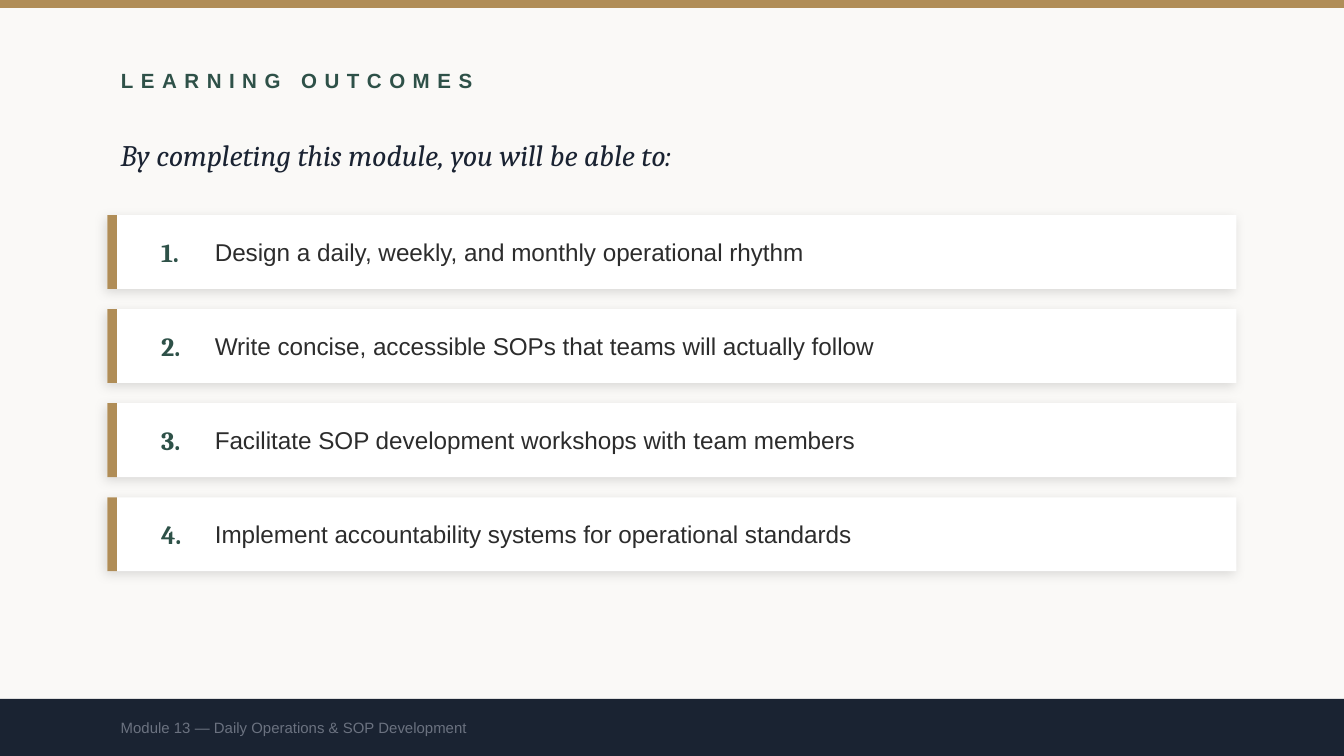
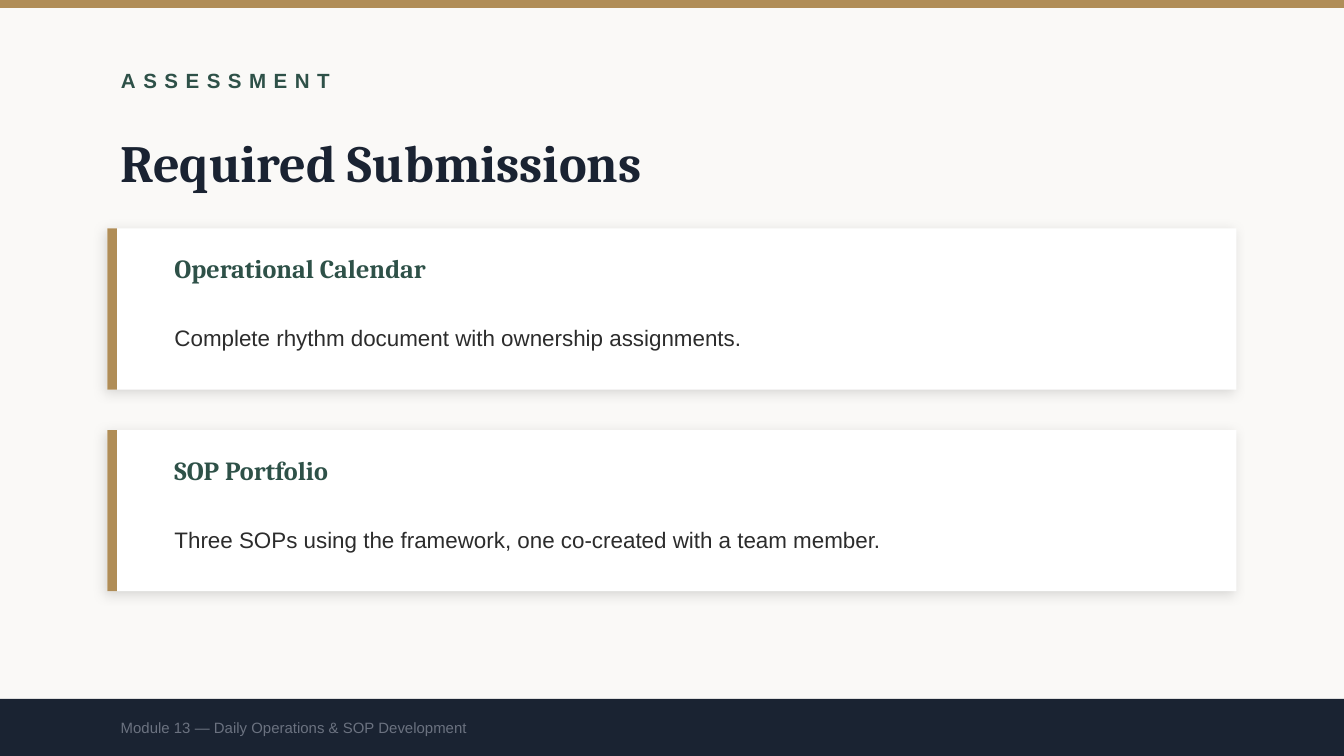
import pptx
import pptx.util
import pptx.dml.color
import pptx.enum.shapes
import pptx.enum.text
import pptx.oxml
import pptx.oxml.ns

Inches = pptx.util.Inches
COLORS = {
    "paper": "FAF9F7",
    "gold": "B08D57",
    "green": "2E5148",
    "navy": "1A2332",
    "card": "FFFFFF",
    "body": "2C2C2C",
    "muted": "6B7280",
}
SANS, SERIF = "Arial", "Cambria"
PAGE_WIDTH = 10
PAGE_HEIGHT = PAGE_WIDTH * 9 / 16
MARGIN = 0.8
FOOTER_TOP = 5.2
FOOTER_HEIGHT = PAGE_HEIGHT - FOOTER_TOP
FOOTER = "Module 13 — Daily Operations & SOP Development"
SHADOW = (
    f'<a:outerShdw {pptx.oxml.ns.nsdecls("a")} blurRad="76200" dist="25400" '
    'dir="8100000" algn="bl" rotWithShape="0">'
    '<a:srgbClr val="000000"><a:alpha val="12000"/></a:srgbClr></a:outerShdw>'
)


def add_bar(slide, left, top, width, height, color):
    bar = slide.shapes.add_shape(
        pptx.enum.shapes.MSO_SHAPE.RECTANGLE,
        Inches(left), Inches(top), Inches(width), Inches(height))
    bar.fill.solid()
    bar.fill.fore_color.rgb = pptx.dml.color.RGBColor.from_string(COLORS[color])
    bar.line.fill.background()
    bar.shadow.inherit = False
    return bar


def add_text(slide, words, left, top, width, height, size, font, color,
             bold=False, italic=False, box=None):
    box = box or slide.shapes.add_textbox(0, 0, 0, 0)
    box.left, box.top = Inches(left), Inches(top)
    box.width, box.height = Inches(width), Inches(height)
    frame = box.text_frame
    frame.text = words
    frame.word_wrap = True
    frame.auto_size = pptx.enum.text.MSO_AUTO_SIZE.NONE
    frame.vertical_anchor = pptx.enum.text.MSO_ANCHOR.MIDDLE
    paragraph = frame.paragraphs[0]
    paragraph.alignment = pptx.enum.text.PP_ALIGN.LEFT
    paragraph.font.size = pptx.util.Pt(size)
    paragraph.font.name = font
    paragraph.font.bold = bold
    paragraph.font.italic = italic
    paragraph.font.color.rgb = pptx.dml.color.RGBColor.from_string(COLORS[color])
    return paragraph


prs = pptx.Presentation()
prs.slide_width, prs.slide_height = Inches(PAGE_WIDTH), Inches(PAGE_HEIGHT)
paper = prs.slide_master.background.fill
paper.solid()
paper.fore_color.rgb = pptx.dml.color.RGBColor.from_string(COLORS["paper"])

pages = []
for section, card_tops, card_height in [
    ("LEARNING OUTCOMES", [1.6 + 0.7 * i for i in range(4)], 0.55),
    ("ASSESSMENT", [1.7 + 1.5 * i for i in range(2)], 1.2),
]:
    slide = prs.slides.add_slide(prs.slide_layouts[5])
    add_bar(slide, 0, 0, PAGE_WIDTH, 0.06, "gold")
    heading = add_text(slide, section, MARGIN, 0.4, 8, 0.4, 11, SANS, "green",
                       bold=True, box=slide.shapes.title)
    heading.runs[0]._r.get_or_add_rPr().set("spc", "400")
    for top in card_tops:
        card = add_bar(slide, MARGIN, top, 8.4, card_height, "card")
        effects = card._element.spPr.find(pptx.oxml.ns.qn("a:effectLst"))
        effects.append(pptx.oxml.parse_xml(SHADOW))
        add_bar(slide, MARGIN, top, 0.07, card_height, "gold")
    add_bar(slide, 0, FOOTER_TOP, PAGE_WIDTH, FOOTER_HEIGHT, "navy")
    add_text(slide, FOOTER, MARGIN, FOOTER_TOP, 8, FOOTER_HEIGHT, 8, SANS, "muted")
    pages.append((slide, card_tops))

outcomes, outcome_tops = pages[0]
add_text(outcomes, "By completing this module, you will be able to:",
         MARGIN, 0.9, 8, 0.5, 16, SERIF, "navy", italic=True)
outcome_texts = [
    "Design a daily, weekly, and monthly operational rhythm",
    "Write concise, accessible SOPs that teams will actually follow",
    "Facilitate SOP development workshops with team members",
    "Implement accountability systems for operational standards",
]
for number, (top, outcome) in enumerate(zip(outcome_tops, outcome_texts), 1):
    add_text(outcomes, f"{number}.", 1.1, top, 0.4, 0.55, 14, SERIF, "green", bold=True)
    add_text(outcomes, outcome, 1.5, top, 7.4, 0.55, 13, SANS, "body")

assessment, submission_tops = pages[1]
add_text(assessment, "Required Submissions", MARGIN, 0.9, 8, 0.6, 28, SERIF, "navy", bold=True)
submissions = [
    ("Operational Calendar", "Complete rhythm document with ownership assignments."),
    ("SOP Portfolio", "Three SOPs using the framework, one co-created with a team member."),
]
for top, (submission, requirement) in zip(submission_tops, submissions):
    add_text(assessment, submission, 1.2, top + 0.12, 7.7, 0.35, 14, SERIF, "green", bold=True)
    detail = add_text(assessment, requirement, 1.2, top + 0.5, 7.7, 0.55, 12, SANS, "body")
    detail.line_spacing = 1.4

prs.save("out.pptx")
